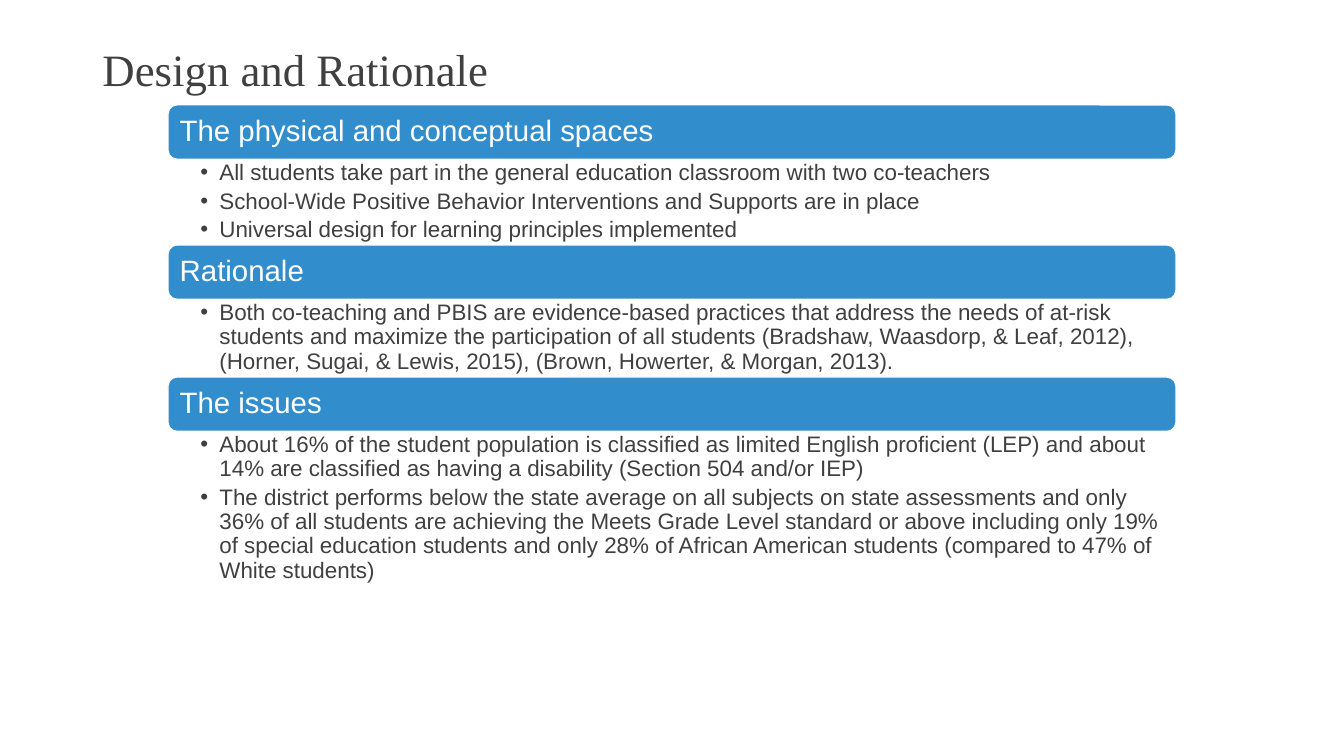
from lxml import etree
from pptx import Presentation
from pptx.dml.color import RGBColor
from pptx.enum.shapes import MSO_SHAPE
from pptx.enum.text import MSO_ANCHOR, MSO_AUTO_SIZE, PP_ALIGN
from pptx.oxml.ns import qn
from pptx.util import Inches, Pt

ROUNDED = MSO_SHAPE.ROUNDED_RECTANGLE
TOP, MIDDLE, BOTTOM = MSO_ANCHOR.TOP, MSO_ANCHOR.MIDDLE, MSO_ANCHOR.BOTTOM
LEFT = PP_ALIGN.LEFT
NO_FIT = MSO_AUTO_SIZE.NONE
COLUMNS, ROWS = 16, 75
COMPARISON_LAYOUT = 4

SECTIONS = [
    ("The physical and conceptual spaces", 8.5, [
        "All students take part in the general education classroom with two co-teachers",
        "School-Wide Positive Behavior Interventions and Supports are in place",
        "Universal design for learning principles implemented",
    ]),
    ("Rationale", 7.7, [
        "Both co-teaching and PBIS are evidence-based practices that address the needs of "
        "at-risk students and maximize the participation of all students (Bradshaw, Waasdorp, "
        "& Leaf, 2012), (Horner, Sugai, & Lewis, 2015), (Brown, Howerter, & Morgan, 2013).",
    ]),
    ("The issues", 15, [
        "About 16% of the student population is classified as limited English proficient (LEP) "
        "and about 14% are classified as having a disability (Section 504 and/or IEP)",
        "The district performs below the state average on all subjects on state assessments and "
        "only 36% of all students are achieving the Meets Grade Level standard or above "
        "including only 19% of special education students and only 28% of African American "
        "students (compared to 47% of White students)",
    ]),
]


def rgb(code):
    return RGBColor.from_string(code)


class SlideBuilder:
    ink, accent, paper = "404040", "318DCB", "FFFFFF"
    heading_font, text_font = "Times New Roman", "Arial"

    def __init__(self, deck):
        self.column = deck.slide_width / COLUMNS
        self.row = deck.slide_height / ROWS
        self.slide = deck.slides.add_slide(deck.slide_layouts[COMPARISON_LAYOUT])
        self.bodies = list(self.slide.placeholders)[1:5]

    def box(self, column, row, columns, rows):
        return (round(column * self.column), round(row * self.row),
                round(columns * self.column), round(rows * self.row))

    def place(self, holder, *cells):
        holder.left, holder.top, holder.width, holder.height = self.box(*cells)

    def frame(self, shape, anchor, left, top, right, bottom):
        frame = shape.text_frame
        frame.word_wrap = True
        frame.auto_size = NO_FIT
        frame.vertical_anchor = anchor
        frame.margin_left, frame.margin_top = Inches(left), Inches(top)
        frame.margin_right, frame.margin_bottom = Inches(right), Inches(bottom)
        return frame

    def style(self, paragraph, size, color, font, after=0):
        paragraph.alignment = LEFT
        paragraph.line_spacing = 0.9
        paragraph.space_before = Pt(0)
        paragraph.space_after = Pt(after)
        paragraph.font.size = Pt(size)
        paragraph.font.bold = False
        paragraph.font.name = font
        paragraph.font.color.rgb = rgb(color)

    def title(self, text, *cells):
        heading = self.slide.shapes.title
        self.place(heading, *cells)
        frame = self.frame(heading, BOTTOM, 0.1, 0.05, 0.1, 0.05)
        frame.text = text
        self.style(frame.paragraphs[0], 32, self.ink, self.heading_font)

    def banner(self, text, *cells):
        banner = self.slide.shapes.add_shape(ROUNDED, *self.box(*cells))
        banner.shadow.inherit = False
        banner.fill.solid()
        banner.fill.fore_color.rgb = rgb(self.accent)
        banner.line.color.rgb = rgb(self.paper)
        banner.line.width = Pt(1)
        frame = self.frame(banner, MIDDLE, 0.09, 0.09, 0.09, 0.09)
        frame.text = text
        self.style(frame.paragraphs[0], 21, self.paper, self.text_font)

    def bullets(self, points, *cells):
        body = self.bodies.pop(0)
        self.place(body, *cells)
        frame = self.frame(body, TOP, 0.32, 0.02, 0.16, 0.02)
        frame.text = "\n".join(points)
        for paragraph in frame.paragraphs:
            paragraph.level = 1
            properties = paragraph._p.get_or_add_pPr()
            properties.set("marL", str(Inches(0.19)))
            properties.set("indent", str(-Inches(0.19)))
            etree.SubElement(properties, qn("a:buFont")).set("typeface", self.text_font)
            etree.SubElement(properties, qn("a:buChar")).set("char", "•")
            self.style(paragraph, 16, self.ink, self.text_font, after=3.2)

    def drop_unused(self):
        for body in self.bodies:
            body.element.getparent().remove(body.element)


def main():
    deck = Presentation()
    deck.slide_width, deck.slide_height = Inches(13.33), Inches(7.5)
    builder = SlideBuilder(deck)
    builder.title("Design and Rationale", 1.1, 4, 12.9, 6)
    row, banner_rows = 10.4, 5.4
    for heading, list_rows, points in SECTIONS:
        builder.banner(heading, 2, row, 12, banner_rows)
        builder.bullets(points, 2, row + banner_rows, 12, list_rows)
        row += banner_rows + list_rows
    builder.drop_unused()
    deck.save("out.pptx")


if __name__ == "__main__":
    main()
